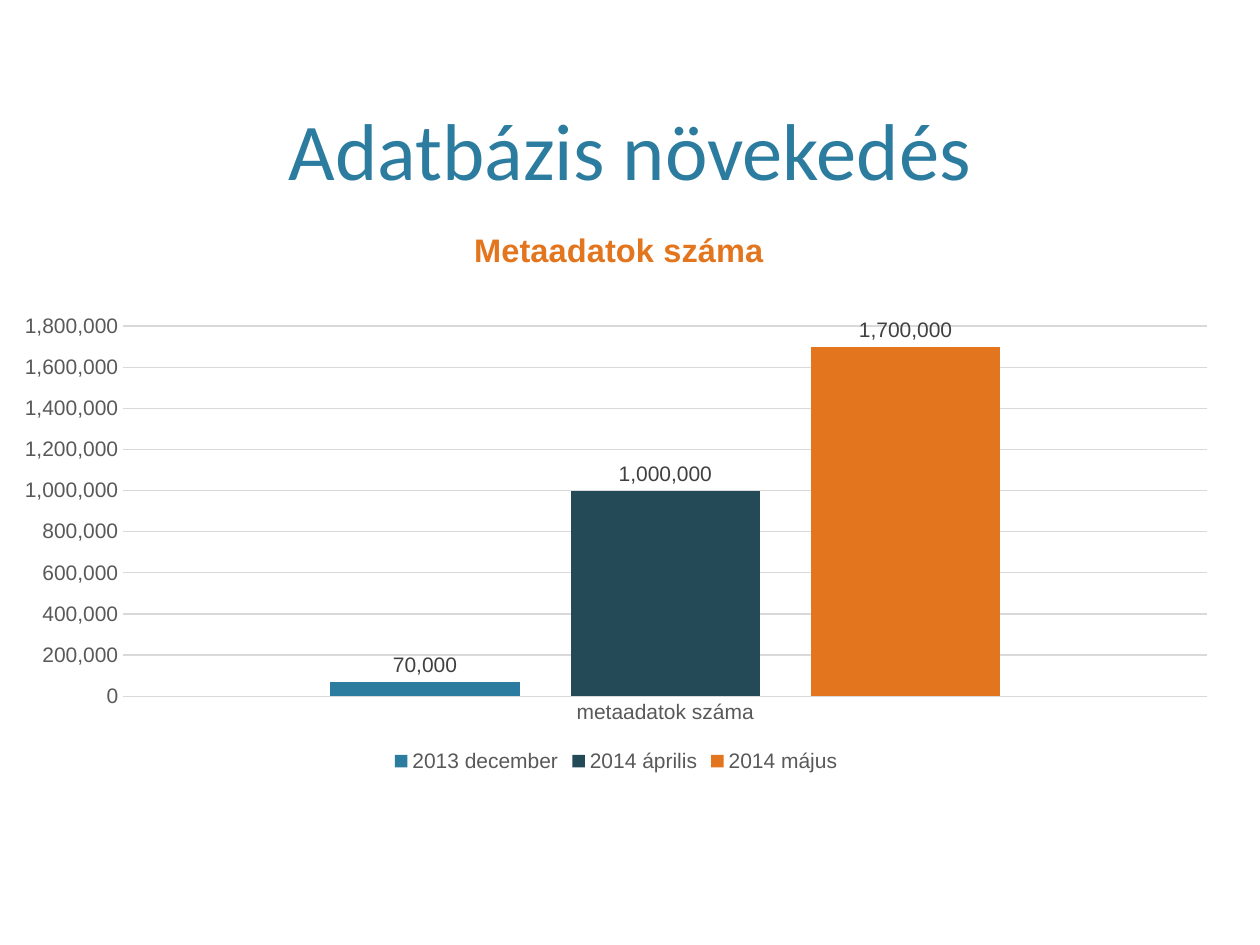
import pptx
import pptx.chart.data
import pptx.dml.color
import pptx.enum.chart
import pptx.enum.text
import pptx.oxml
import pptx.oxml.ns
import pptx.util

COLORS = {
    "blue": "2C7C9F",
    "navy": "244A58",
    "orange": "E2751D",
    "axis_text": "595959",
    "label_text": "404040",
    "grid": "D9D9D9",
}
SERIES = [
    ("2013 december", 70000, "blue"),
    ("2014 április", 1000000, "navy"),
    ("2014 május", 1700000, "orange"),
]
NUMBER_FORMAT = "#,##0"


def color(name):
    return pptx.dml.color.RGBColor.from_string(COLORS[name])


def set_font(font, size, color_name, name="Arial", bold=False):
    font.size = pptx.util.Pt(size)
    font.name = name
    font.bold = bold
    font.color.rgb = color(color_name)


def write_text(text_frame, text, **font_format):
    paragraph = text_frame.paragraphs[0]
    paragraph.alignment = pptx.enum.text.PP_ALIGN.CENTER
    run = paragraph.add_run()
    run.text = text
    set_font(run.font, **font_format)


def set_layout(element, index, target=None, **fractions):
    for layout in element.findall(pptx.oxml.ns.qn("c:layout")):
        element.remove(layout)
    settings = f'<c:layoutTarget val="{target}"/>' if target else ""
    settings += "".join(f'<c:{key}Mode val="edge"/>' for key in ("x", "y"))
    settings += "".join(f'<c:{key} val="{value}"/>' for key, value in fractions.items())
    element.insert(index, pptx.oxml.parse_xml(
        f'<c:layout {pptx.oxml.ns.nsdecls("c")}>'
        f"<c:manualLayout>{settings}</c:manualLayout></c:layout>"
    ))


def add_heading(slide, left, top, width, height):
    shape = slide.shapes.add_textbox(left, top, width, height)
    text_frame = shape.text_frame
    text_frame.word_wrap = True
    text_frame.vertical_anchor = pptx.enum.text.MSO_ANCHOR.BOTTOM
    text_frame.margin_bottom = pptx.util.Cm(0.05)
    write_text(text_frame, "Adatbázis növekedés", size=46, color_name="blue", name="Calibri")


def style_axes(chart):
    for axis in (chart.category_axis, chart.value_axis):
        axis.major_tick_mark = pptx.enum.chart.XL_TICK_MARK.NONE
        axis.minor_tick_mark = pptx.enum.chart.XL_TICK_MARK.NONE
        set_font(axis.tick_labels.font, 12, "axis_text")
    value_axis = chart.value_axis
    value_axis.minimum_scale = 0
    value_axis.maximum_scale = 1800000
    value_axis.major_unit = 200000
    value_axis.tick_labels.number_format = NUMBER_FORMAT
    value_axis.tick_labels.number_format_is_linked = False
    value_axis.format.line.fill.background()
    for line in (chart.category_axis.format.line, value_axis.major_gridlines.format.line):
        line.color.rgb = color("grid")
        line.width = pptx.util.Pt(0.75)


def style_series(series, color_name):
    series.format.fill.solid()
    series.format.fill.fore_color.rgb = color(color_name)
    series.invert_if_negative = False
    labels = series.data_labels
    labels.show_value = True
    labels.position = pptx.enum.chart.XL_LABEL_POSITION.OUTSIDE_END
    labels.number_format = NUMBER_FORMAT
    labels.number_format_is_linked = False
    set_font(labels.font, 12, "label_text")


def add_growth_chart(slide, left, top, width, height):
    data = pptx.chart.data.CategoryChartData(number_format=NUMBER_FORMAT)
    data.categories = ["metaadatok száma"]
    for name, value, _ in SERIES:
        data.add_series(name, [value])
    chart = slide.shapes.add_chart(
        pptx.enum.chart.XL_CHART_TYPE.COLUMN_CLUSTERED, left, top, width, height, data
    ).chart
    set_font(chart.font, 10, "axis_text")
    chart.has_title = True
    write_text(chart.chart_title.text_frame, "Metaadatok száma",
               size=18.6, color_name="orange", bold=True)
    chart.has_legend = True
    chart.legend.position = pptx.enum.chart.XL_LEGEND_POSITION.BOTTOM
    chart.legend.include_in_layout = False
    set_font(chart.legend.font, 12, "axis_text")
    plot = chart.plots[0]
    plot.gap_width = 219
    plot.overlap = -27
    plot.vary_by_categories = False
    for series, (_, _, color_name) in zip(plot.series, SERIES):
        style_series(series, color_name)
    style_axes(chart)
    chart_element = chart.element.chart
    set_layout(chart_element.find(pptx.oxml.ns.qn("c:title")), 1, x=0.38, y=0.04)
    set_layout(chart_element.plotArea, 0, target="inner", x=0.1, y=0.22, w=0.88, h=0.64)


def main():
    presentation = pptx.Presentation()
    presentation.slide_width = pptx.util.Cm(25.4)
    presentation.slide_height = pptx.util.Cm(19.05)
    slide = presentation.slides.add_slide(presentation.slide_layouts[6])
    add_heading(slide, *map(pptx.util.Cm, (1.52, 0.3, 22.35, 3.71)))
    add_growth_chart(slide, *map(pptx.util.Cm, (0, 4.01, 24.84, 11.66)))
    presentation.save("out.pptx")


if __name__ == "__main__":
    main()
